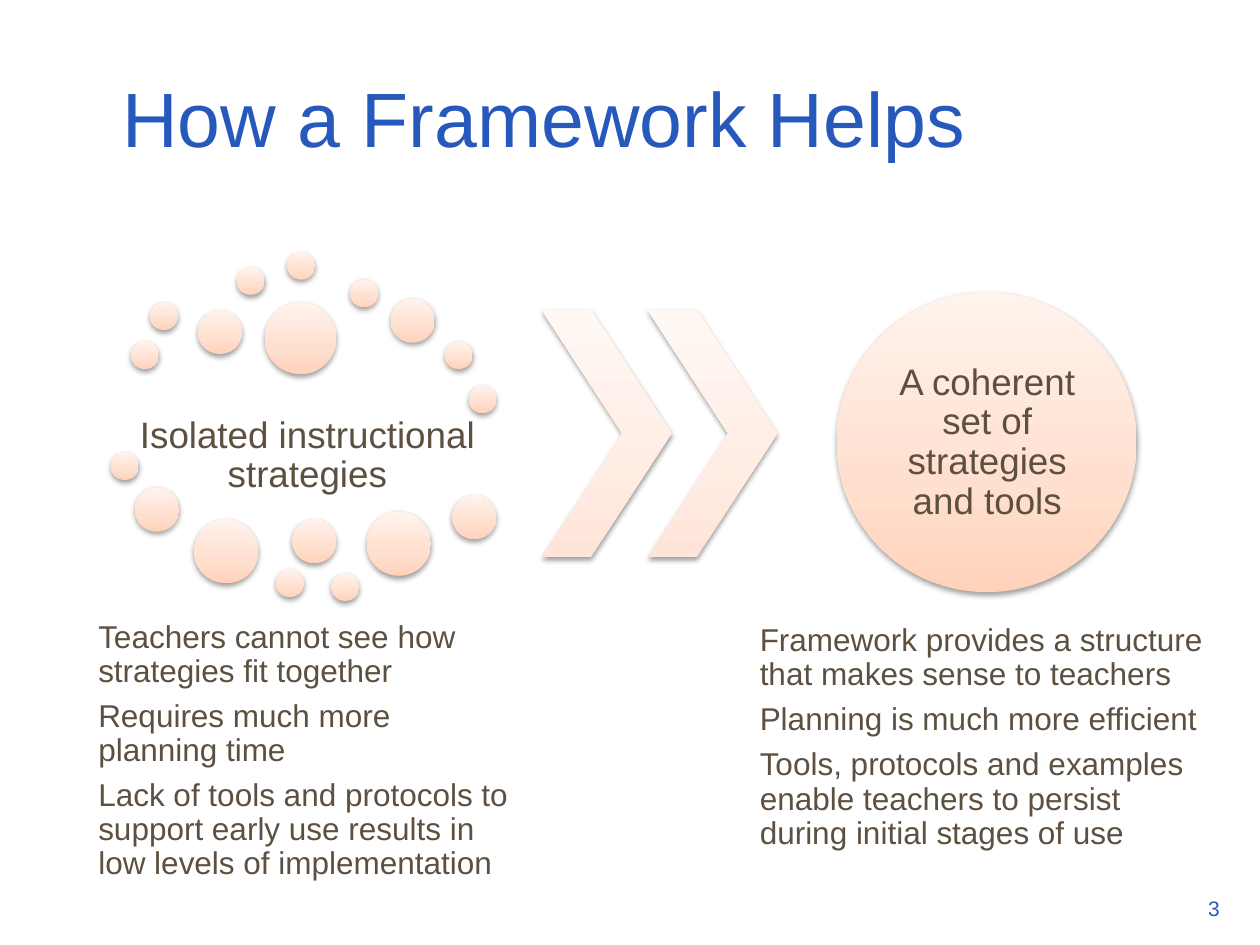
from copy import deepcopy

from lxml.etree import SubElement
from pptx import Presentation
from pptx.dml.color import RGBColor
from pptx.enum.shapes import MSO_SHAPE
from pptx.enum.text import MSO_ANCHOR, MSO_AUTO_SIZE, PP_ALIGN
from pptx.oxml.ns import qn
from pptx.util import Inches, Pt

BLUE = RGBColor(0x27, 0x58, 0xBC)
BROWN = RGBColor(0x5D, 0x50, 0x40)
PEACH = (RGBColor(0xFF, 0xD2, 0xBA), RGBColor(0xFF, 0xDF, 0xCE), RGBColor(0xFF, 0xF3, 0xED))
PALE_PEACH = (RGBColor(0xFF, 0xE5, 0xD9), RGBColor(0xFF, 0xEC, 0xE3), RGBColor(0xFF, 0xF8, 0xF4))
STOP_POSITIONS = (0, 0.35, 1)

# Diameter of the dots: left and top of each one
DOTS = {
    0.22: [(1.04, 2.71), (1.19, 2.4), (1.88, 2.12), (2.28, 2), (2.78, 2.22), (3.53, 2.71),
           (3.72, 3.06), (0.88, 3.59), (2.19, 4.52), (2.63, 4.55)],
    0.35: [(1.57, 2.46), (3.1, 2.37), (1.07, 3.87), (2.32, 4.12), (3.59, 3.93)],
    0.51: [(1.54, 4.12), (2.91, 4.06)],
    0.57: [(2.1, 2.4)],
}
PROBLEMS = [
    "Teachers cannot see how strategies fit together",
    "Requires much more planning time",
    "Lack of tools and protocols to support early use results in low levels of implementation",
]
BENEFITS = [
    "Framework provides a structure that makes sense to teachers",
    "Planning is much more efficient",
    "Tools, protocols and examples enable teachers to persist during initial stages of use",
]


class SlideBuilder:
    font = "Arial"
    line_spacing = 0.9
    gap_ratio = 0.35  # space after a paragraph, as a share of the text size

    def __init__(self, page):
        self.page = page

    def place(self, box, left, top, width, height):
        box.left, box.top = Inches(left), Inches(top)
        box.width, box.height = Inches(width), Inches(height)

    def prepare_frame(self, box, inset=None):
        frame = box.text_frame
        frame.word_wrap = True
        frame.auto_size = MSO_AUTO_SIZE.NONE
        frame.vertical_anchor = MSO_ANCHOR.MIDDLE
        if inset is not None:
            frame.margin_left = frame.margin_right = Inches(inset)
            frame.margin_top = frame.margin_bottom = Inches(inset)
        return frame

    def add_span(self, para, text, size, color, align):
        para.alignment = align
        span = para.add_run()
        span.text = text
        span.font.name = self.font
        span.font.size = Pt(size)
        span.font.color.rgb = color

    def space(self, para, size):
        para.line_spacing = self.line_spacing
        para.space_before = Pt(0)
        para.space_after = Pt(size * self.gap_ratio)

    def title(self, text, *bounds):
        box = self.page.shapes.title
        self.place(box, *bounds)
        frame = self.prepare_frame(box)
        self.add_span(frame.paragraphs[0], text, 44, BLUE, PP_ALIGN.LEFT)

    def plain_list(self, placeholder, items, *bounds, size=18):
        """Fill a body placeholder with paragraphs that have no bullets."""
        self.place(placeholder, *bounds)
        frame = self.prepare_frame(placeholder, inset=0.03)
        for index, item in enumerate(items):
            para = frame.add_paragraph() if index else frame.paragraphs[0]
            self.space(para, size)
            properties = para._p.get_or_add_pPr()
            properties.set("marL", "0")
            properties.set("indent", "0")
            SubElement(properties, qn("a:buNone"))
            self.add_span(para, item, size, BROWN, PP_ALIGN.LEFT)

    def caption(self, text, *bounds, inset=0.03, size=21):
        box = self.page.shapes.add_textbox(0, 0, 0, 0)
        self.place(box, *bounds)
        para = self.prepare_frame(box, inset).paragraphs[0]
        self.space(para, size)
        self.add_span(para, text, size, BROWN, PP_ALIGN.CENTER)

    def page_number(self, text, *bounds):
        box = self.page.shapes.add_textbox(0, 0, 0, 0)
        self.place(box, *bounds)
        frame = self.prepare_frame(box)
        self.add_span(frame.paragraphs[0], text, 12, BLUE, PP_ALIGN.RIGHT)

    def shaded_shape(self, kind, *bounds, colors=PEACH):
        shape = self.page.shapes.add_shape(kind, *map(Inches, bounds))
        self.shade(shape, colors)
        shape.line.fill.background()
        self.drop_shadow(shape)
        return shape

    def shade(self, shape, colors):
        """Fill with a three-stop gradient that runs from bottom to top."""
        shape.fill.gradient()
        shape.fill.gradient_angle = 90
        stop_list = shape._element.spPr.find(qn("a:gradFill")).find(qn("a:gsLst"))
        stop_list.insert(1, deepcopy(stop_list[0]))
        for stop, position, color in zip(shape.fill.gradient_stops, STOP_POSITIONS, colors):
            stop.position = position
            stop.color.rgb = color

    def drop_shadow(self, shape):
        shape.shadow.inherit = False
        effects = shape._element.spPr.find(qn("a:effectLst"))
        shadow = SubElement(effects, qn("a:outerShdw"), blurRad="40000", dist="20000",
                            dir="5400000", rotWithShape="0")
        color = SubElement(shadow, qn("a:srgbClr"), val="000000")
        SubElement(color, qn("a:alpha"), val="38000")


def main():
    deck = Presentation()
    deck.slide_width, deck.slide_height = Inches(10), Inches(7.5)
    page = deck.slides.add_slide(deck.slide_layouts.get_by_name("Two Content"))
    builder = SlideBuilder(page)
    left_list, right_list = page.placeholders[1], page.placeholders[2]

    builder.title("How a Framework Helps", 0.87, 0.3, 8.51, 1.25)

    builder.caption("Isolated instructional strategies", 1.04, 3.16, 2.8, 0.92)
    builder.plain_list(left_list, PROBLEMS, 0.75, 5.1, 3.38, 1.73)
    for diameter, corners in DOTS.items():
        for left, top in corners:
            builder.shaded_shape(MSO_SHAPE.OVAL, left, top, diameter, diameter)

    for left in (4.3, 5.14):
        chevron = builder.shaded_shape(MSO_SHAPE.CHEVRON, left, 2.46, 1.03, 1.96,
                                       colors=PALE_PEACH)
        chevron.adjustments[0] = 0.62

    builder.shaded_shape(MSO_SHAPE.OVAL, 6.64, 2.32, 2.38, 2.38)
    builder.caption("A coherent set of strategies and tools", 6.99, 2.67, 1.69, 1.69, inset=0)
    builder.plain_list(right_list, BENEFITS, 6, 4.99, 3.67, 1.73)

    builder.page_number("3", 9.21, 6.98, 0.57, 0.45)
    deck.save("out.pptx")


if __name__ == "__main__":
    main()
